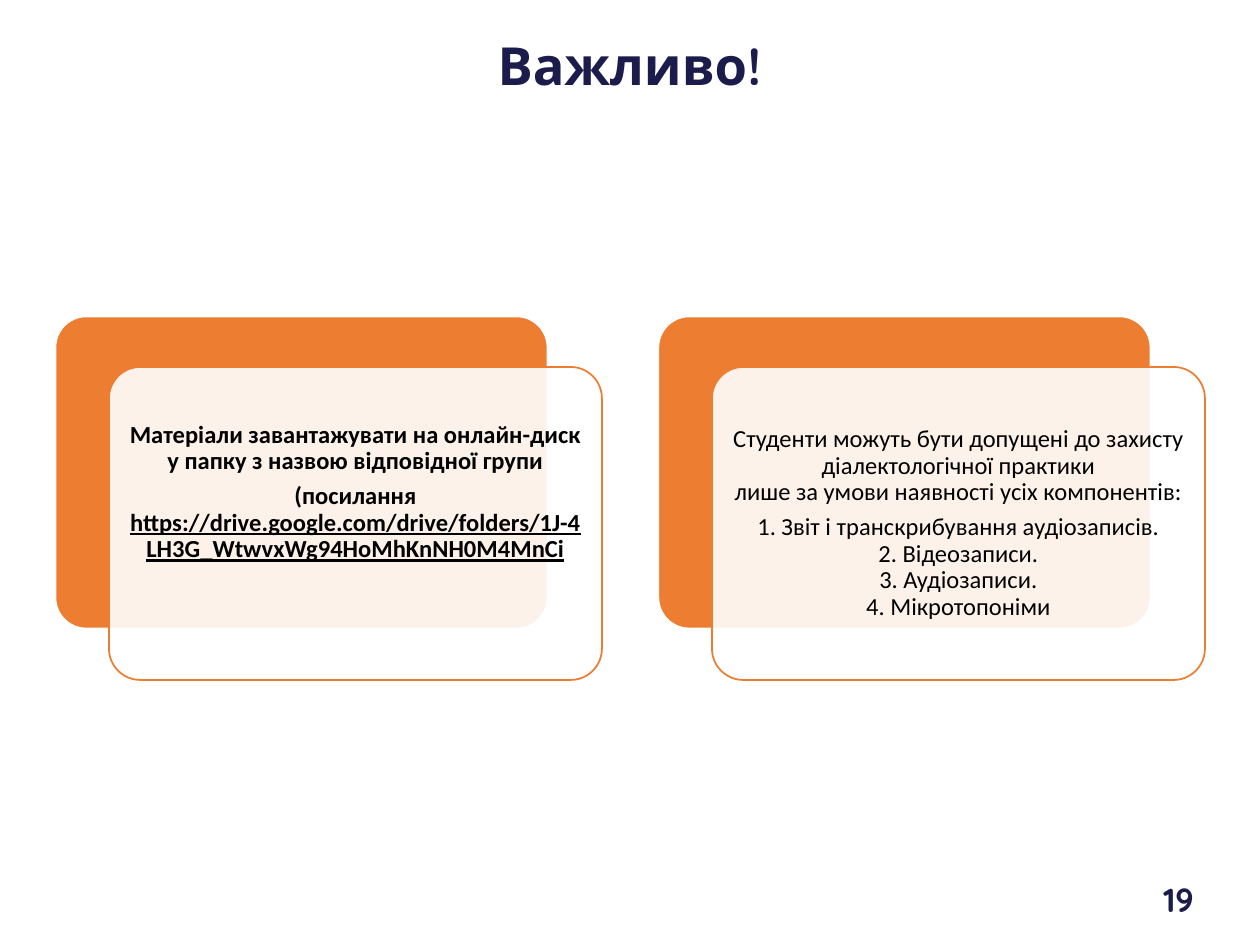
from pptx import Presentation, util as u
from pptx.dml.color import RGBColor
from pptx.enum import shapes, text
from lxml import etree

PX = 914400 // 126
NAVY, ORANGE, WHITE, BLACK = "1C1C4C", "ED7D31", "FFFFFF", "000000"

heading = "Важливо!"
page_number = "19"
cards = [
    {"bold": True, "bottom": 70, "paragraphs": [
        ["Матеріали завантажувати на онлайн-диск у папку з назвою відповідної групи"],
        ["(посилання ", "https://drive.google.com/drive/folders/1J-4LH3G_WtwvxWg94HoMhKnNH0M4MnCi"],
    ]},
    {"bold": False, "bottom": 8, "paragraphs": [
        ["Студенти можуть бути допущені до захисту діалектологічної практики\n"
         "лише за умови наявності усіх компонентів:"],
        ["1. Звіт і транскрибування аудіозаписів.\n2. Відеозаписи.\n3. Аудіозаписи.\n4. Мікротопоніми"],
    ]},
]
LEFT, TOP, WIDTH, HEIGHT = 55, 316, 493, 313
COLUMN_STEP, SHIFT_X, SHIFT_Y = 603, 54, 51
INSET = 8


def px(*lengths):
    return [round(length * PX) for length in lengths]


def color(value):
    return RGBColor.from_string(value)


def style(paragraph, font, size, ink, bold, align):
    paragraph.alignment = align
    paragraph.line_spacing = 0.9
    for run in paragraph.runs:
        run.font.name, run.font.size, run.font.bold = font, u.Pt(size), bold
        run.font.color.rgb = color(ink)


def rounded(x, y, fill, line, line_width):
    panel = slide.shapes.add_shape(shapes.MSO_SHAPE.ROUNDED_RECTANGLE, *px(x, y, WIDTH, HEIGHT))
    panel.adjustments[0] = 0.1
    panel.shadow.inherit = False
    panel.fill.solid()
    panel.fill.fore_color.rgb = color(fill)
    panel.line.color.rgb = color(line)
    panel.line.width = u.Pt(line_width)
    return panel


def make_translucent(panel, percent):
    tint = panel.fill._xPr.find(".//{*}srgbClr")
    etree.SubElement(tint, tint.tag.replace("srgbClr", "alpha"), val=str(percent * 1000))


def write_card(frame, card):
    frame.word_wrap = True
    frame.vertical_anchor = text.MSO_ANCHOR.MIDDLE
    frame.margin_left, frame.margin_top, frame.margin_right, frame.margin_bottom = px(
        INSET, INSET, INSET, card["bottom"])
    for i, (lead, *links) in enumerate(card["paragraphs"]):
        paragraph = frame.paragraphs[0] if i == 0 else frame.add_paragraph()
        paragraph.text = lead
        for link in links:
            address = paragraph.add_run()
            address.text = link
            address.font.underline = True
        paragraph.space_after = u.Pt(5)
        style(paragraph, "Calibri", 14, BLACK, card["bold"], text.PP_ALIGN.CENTER)


prs = Presentation()
prs.slide_width, prs.slide_height = px(1260, 945)
slide = prs.slides.add_slide(prs.slide_layouts[5])

title = slide.shapes.title
title.left, title.top, title.width, title.height = px(241, 30, 777, 77)
title.text_frame.text = heading
title.text_frame.vertical_anchor = text.MSO_ANCHOR.MIDDLE
style(title.text_frame.paragraphs[0], "Quicksand", 30, NAVY, True, text.PP_ALIGN.CENTER)

number = slide.shapes.add_textbox(*px(922, 877, 284, 50)).text_frame
number.word_wrap = True
number.vertical_anchor = text.MSO_ANCHOR.MIDDLE
number.text = page_number
style(number.paragraphs[0], "Quicksand", 19, NAVY, True, text.PP_ALIGN.RIGHT)

for column, card in enumerate(cards):
    x = LEFT + column * COLUMN_STEP
    rounded(x, TOP, ORANGE, WHITE, 1.5)
    front = rounded(x + SHIFT_X, TOP + SHIFT_Y, WHITE, ORANGE, 1)
    make_translucent(front, 90)
    write_card(front.text_frame, card)

prs.save("out.pptx")
